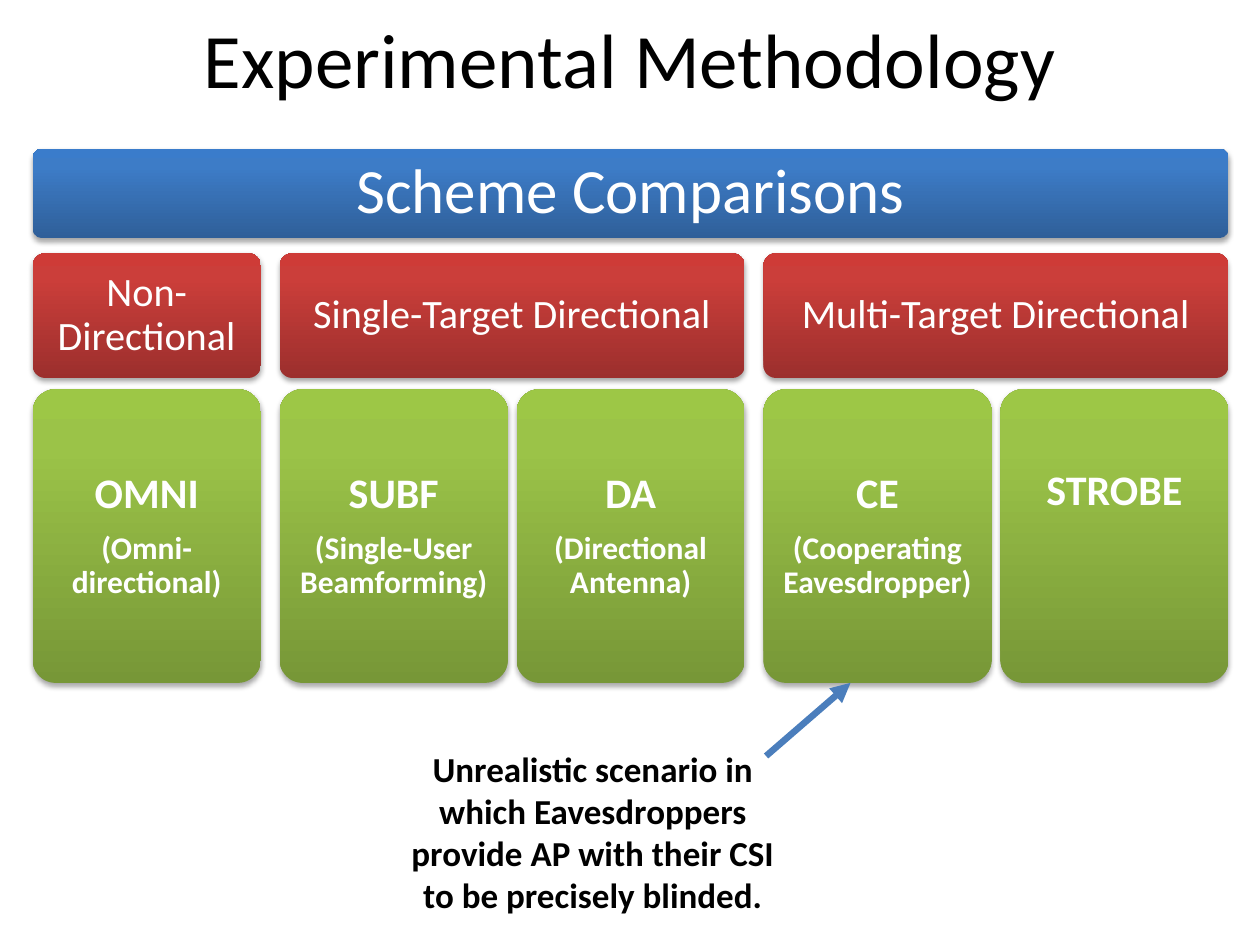
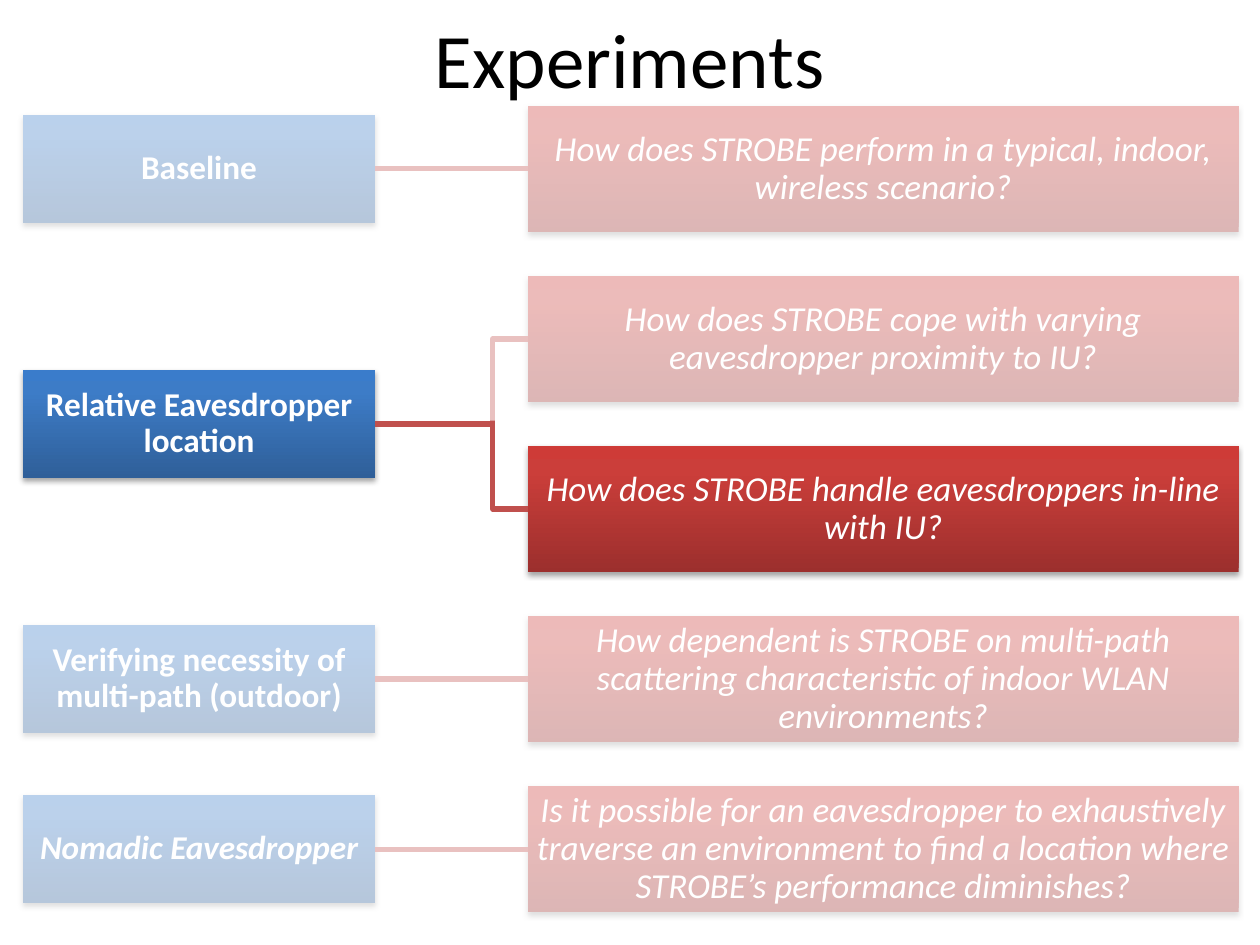
"""Build two slides on the schemes compared and the experiments run."""
import copy
from dataclasses import dataclass

import pptx
import pptx.dml.color
import pptx.enum.shapes
import pptx.enum.text
import pptx.oxml
import pptx.oxml.ns
import pptx.util
from lxml import etree

Inches = pptx.util.Inches
Pt = pptx.util.Pt
RGBColor = pptx.dml.color.RGBColor
Shapes = pptx.enum.shapes.MSO_SHAPE
Connectors = pptx.enum.shapes.MSO_CONNECTOR
qn = pptx.oxml.ns.qn

FONT = "Calibri"
BLACK = RGBColor(0x00, 0x00, 0x00)
WHITE = RGBColor(0xFF, 0xFF, 0xFF)
ARROW_BLUE = RGBColor(0x4B, 0x7E, 0xBC)
BRANCH_RED = RGBColor(0xC0, 0x50, 0x4D)
BLUE = (RGBColor(0x2F, 0x5F, 0x99), RGBColor(0x3D, 0x7C, 0xC7), RGBColor(0x3A, 0x7C, 0xCB))
RED = (RGBColor(0x9C, 0x2F, 0x2D), RGBColor(0xCB, 0x3E, 0x3A), RGBColor(0xCE, 0x3B, 0x37))
GREEN = (RGBColor(0x77, 0x97, 0x37), RGBColor(0x9B, 0xC3, 0x48), RGBColor(0x9D, 0xC7, 0x46))
STOPS = (0, 0.8, 1)

SHADOW_XML = (
    f'<a:outerShdw {pptx.oxml.ns.nsdecls("a")} blurRad="{Pt(3.1)}" dist="{Pt(1.8)}" '
    'dir="5400000" rotWithShape="0"><a:srgbClr val="000000"><a:alpha val="35000"/>'
    '</a:srgbClr></a:outerShdw>'
)


@dataclass(frozen=True)
class BoxStyle:
    """Look shared by boxes of one kind."""
    gradient: tuple
    size: float
    inset: float
    bold: bool = False
    italic: bool = False
    geometry: int = Shapes.RECTANGLE


@dataclass(frozen=True)
class Scheme:
    """One scheme with its explanation."""
    name: str
    meaning: str = ""


@dataclass(frozen=True)
class Family:
    """A family of directional behaviour and its schemes."""
    name: str
    schemes: tuple


@dataclass(frozen=True)
class Experiment:
    """An experiment and the questions it answers."""
    name: str
    questions: tuple
    italic: bool = False


ROUNDED = Shapes.ROUNDED_RECTANGLE
BANNER = BoxStyle(BLUE, 36, 0.15, geometry=ROUNDED)
FAMILY = BoxStyle(RED, 23, 0.1, geometry=ROUNDED)
SCHEME = BoxStyle(GREEN, 24, 0.1, bold=True, geometry=ROUNDED)
EXPERIMENT = BoxStyle(BLUE, 19, 0.01, bold=True)
NOMADIC = BoxStyle(BLUE, 19, 0.01, bold=True, italic=True)
QUESTION = BoxStyle(RED, 20, 0.01, italic=True)
MEANING_SIZE = 18

FAMILIES = (
    Family("Non-Directional", (Scheme("OMNI", "(Omni-directional)"),)),
    Family("Single-Target Directional", (
        Scheme("SUBF", "(Single-User Beamforming)"),
        Scheme("DA", "(Directional Antenna)"))),
    Family("Multi-Target Directional", (
        Scheme("CE", "(Cooperating Eavesdropper)"),
        Scheme("STROBE"))),
)
EXPERIMENTS = (
    Experiment("Baseline", (
        "How does STROBE perform in a typical, indoor, wireless scenario?",)),
    Experiment("Relative Eavesdropper location", (
        "How does STROBE cope with varying eavesdropper proximity to IU?",
        "How does STROBE handle eavesdroppers in-line with IU?")),
    Experiment("Verifying necessity of multi-path (outdoor)", (
        "How dependent is STROBE on multi-path scattering characteristic of indoor "
        "WLAN environments?",)),
    Experiment("Nomadic Eavesdropper", (
        "Is it possible for an eavesdropper to exhaustively traverse an environment to "
        "find a location where STROBE’s performance diminishes?",), italic=True),
)
VEILS = ((0, 4.69, 9.92, 2.65), (0.08, 0.8, 9.92, 1.33), (3.89, 2.01, 6, 1.33))


def format_paragraph(paragraph, size: float, color: RGBColor, bold: bool = False,
                     italic: bool = False) -> None:
    """Centre a paragraph and format its runs."""
    paragraph.alignment = pptx.enum.text.PP_ALIGN.CENTER
    for run in paragraph.runs:
        run.font.name = FONT
        run.font.size = Pt(size)
        run.font.color.rgb = color
        run.font.bold = bold
        run.font.italic = italic


def add_titled_slide(deck, heading: str):
    """Add a title-only slide with the shared title style."""
    slide = deck.slides.add_slide(deck.slide_layouts[5])
    title = slide.shapes.title
    title.left, title.top = Inches(0.5), Inches(0)
    title.width, title.height = Inches(9), Inches(0.92)
    title.text_frame.text = heading
    title.text_frame.vertical_anchor = pptx.enum.text.MSO_ANCHOR.MIDDLE
    format_paragraph(title.text_frame.paragraphs[0], 44, BLACK)
    return slide


def paint_gradient(fill, properties, colors: tuple) -> None:
    """Fill a shape from bottom to top with three colours."""
    fill.gradient()
    fill.gradient_angle = 90
    stop_list = properties.find(".//" + qn("a:gsLst"))
    stop_list.append(copy.deepcopy(stop_list[-1]))
    for stop, position, color in zip(fill.gradient_stops, STOPS, colors):
        stop.position = position
        stop.color.rgb = color


def add_box(slide, style: BoxStyle, lines: tuple, left: float, top: float,
            width: float, height: float):
    """Add a shaded box; a second line is an explanation in smaller type."""
    box = slide.shapes.add_shape(style.geometry, Inches(left), Inches(top),
                                 Inches(width), Inches(height))
    if style.geometry == ROUNDED:
        box.adjustments[0] = 0.1
    properties = box.element.spPr
    paint_gradient(box.fill, properties, style.gradient)
    box.line.fill.background()
    box.shadow.inherit = False
    properties.find(qn("a:effectLst")).append(pptx.oxml.parse_xml(SHADOW_XML))

    frame = box.text_frame
    frame.word_wrap = True
    frame.vertical_anchor = pptx.enum.text.MSO_ANCHOR.MIDDLE
    frame.margin_left = frame.margin_right = Inches(style.inset)
    frame.margin_top = frame.margin_bottom = Inches(style.inset)
    frame.text = "\n".join(lines)
    for index, paragraph in enumerate(frame.paragraphs):
        size = MEANING_SIZE if index else style.size
        format_paragraph(paragraph, size, WHITE, style.bold, style.italic)
        paragraph.line_spacing = 0.9
        if index < len(lines) - 1:
            paragraph.space_after = Pt(0.35 * size)
    return box


def add_line(slide, kind: int, color: RGBColor, weight: float, start: tuple = (0, 0),
             end: tuple = (0, 0)):
    """Add a connector without shadow."""
    line = slide.shapes.add_connector(kind, *map(Inches, start + end))
    line.line.color.rgb = color
    line.line.width = Pt(weight)
    etree.SubElement(line.element.spPr, qn("a:effectLst"))
    return line


def add_branch(slide, experiment, question, bent: bool) -> None:
    """Join an experiment to one of its questions."""
    kind = Connectors.ELBOW if bent else Connectors.STRAIGHT
    branch = add_line(slide, kind, BRANCH_RED, 3)
    branch.begin_connect(experiment, 3)
    branch.end_connect(question, 1)
    if bent:
        guides = branch.element.spPr.find(".//" + qn("a:avLst"))
        etree.SubElement(guides, qn("a:gd"), name="adj1", fmla="val 77000")


def add_veil(slide, left: float, top: float, width: float, height: float) -> None:
    """Fade an area with translucent white."""
    veil = slide.shapes.add_shape(Shapes.RECTANGLE, Inches(left), Inches(top),
                                  Inches(width), Inches(height))
    veil.fill.solid()
    veil.fill.fore_color.rgb = WHITE
    color = veil.element.spPr.find(qn("a:solidFill"))[0]
    etree.SubElement(color, qn("a:alpha"), val="65000")
    veil.line.fill.background()
    veil.shadow.inherit = False


def build_methodology(deck) -> None:
    """Show the schemes grouped by family."""
    slide = add_titled_slide(deck, "Experimental Methodology")
    left, scheme_width, scheme_gap, family_gap = 0.26, 1.81, 0.07, 0.15
    add_box(slide, BANNER, ("Scheme Comparisons",), left, 1.18, 9.49, 0.71)
    for family in FAMILIES:
        count = len(family.schemes)
        family_width = count * scheme_width + (count - 1) * scheme_gap
        add_box(slide, FAMILY, (family.name,), left, 2.01, family_width, 0.99)
        for index, scheme in enumerate(family.schemes):
            lines = (scheme.name, scheme.meaning) if scheme.meaning else (scheme.name,)
            box = add_box(slide, SCHEME, lines, left + index * (scheme_width + scheme_gap),
                          3.09, scheme_width, 2.33)
            if not scheme.meaning:
                box.text_frame.margin_bottom = Inches(0.8)
        left += family_width + family_gap

    caveat = slide.shapes.add_textbox(Inches(3.08), Inches(5.88), Inches(3.25), Inches(1.45))
    caveat.text_frame.word_wrap = True
    caveat.text_frame.text = ("Unrealistic scenario in which Eavesdroppers provide AP with "
                              "their CSI to be precisely blinded.")
    format_paragraph(caveat.text_frame.paragraphs[0], 20, BLACK, bold=True)
    arrow = add_line(slide, Connectors.STRAIGHT, ARROW_BLUE, 3.75, (6.08, 6), (6.75, 5.42))
    etree.SubElement(arrow.line._get_or_add_ln(), qn("a:tailEnd"), type="triangle")


def build_experiments(deck) -> None:
    """Show the experiments with their questions, all but one faded."""
    slide = add_titled_slide(deck, "Experiments")
    top, pitch, question_height, experiment_height = 0.84, 1.35, 1, 0.86
    for experiment in EXPERIMENTS:
        count = len(experiment.questions)
        middle = top + ((count - 1) * pitch + question_height) / 2
        style = NOMADIC if experiment.italic else EXPERIMENT
        source = add_box(slide, style, (experiment.name,), 0.18,
                         middle - experiment_height / 2, 2.8, experiment_height)
        for question in experiment.questions:
            target = add_box(slide, QUESTION, (question,), 4.19, top, 5.64, question_height)
            add_branch(slide, source, target, bent=count > 1)
            top += pitch
    for veil in VEILS:
        add_veil(slide, *veil)


def main() -> None:
    """Build and save the deck."""
    deck = pptx.Presentation()
    deck.slide_width, deck.slide_height = Inches(10), Inches(7.5)
    build_methodology(deck)
    build_experiments(deck)
    deck.save("out.pptx")


if __name__ == "__main__":
    main()
